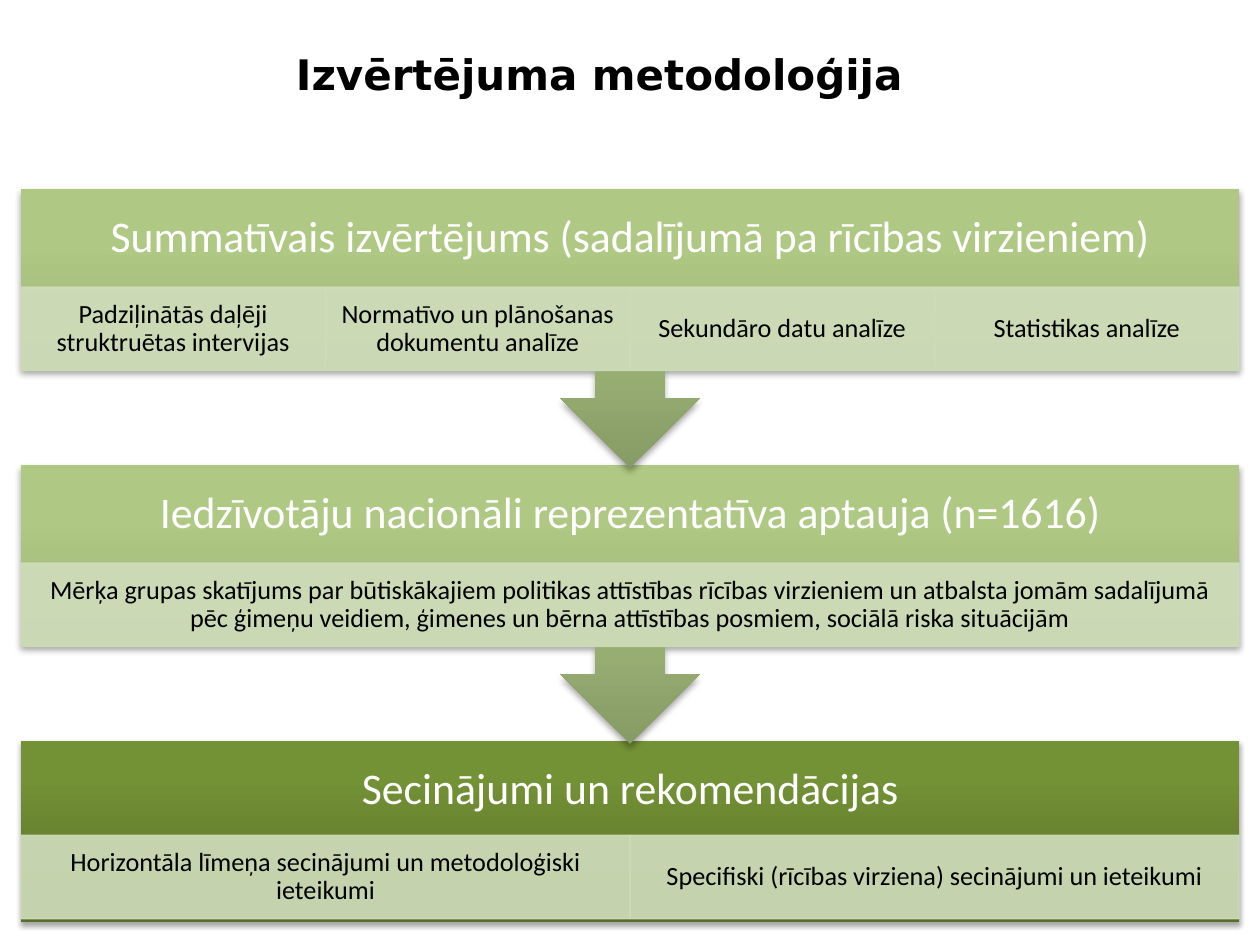
from dataclasses import dataclass

from lxml.etree import SubElement
from pptx import Presentation
from pptx.dml.color import RGBColor
from pptx.enum.shapes import MSO_SHAPE as Shape
from pptx.enum.text import MSO_ANCHOR as Anchor, PP_ALIGN as Align
from pptx.oxml import parse_xml
from pptx.oxml.ns import nsdecls, qn
from pptx.util import Pt


@dataclass(frozen=True)
class Theme:
    black: str = "000000"
    white: str = "FFFFFF"
    cell: str = "D0DDBC"
    light: tuple = ("879B66", "AFC984", "B0CB84")
    dark: tuple = ("586F29", "739135", "749334")
    title_font: str = "DejaVu Sans"
    font: str = "Calibri"
    title_size: float = 24
    header_size: float = 25
    cell_size: float = 15


THEME = Theme()
LEFT, TOP, WIDTH = 12, 108, 696
STEP = 157.7
CALLOUT_H, FINAL_H = 159.4, 103.7
HEADER_H, CELL_H = 56, 47.7

STAGES = [
    ("Summatīvais izvērtējums (sadalījumā pa rīcības virzieniem)",
     ["Padziļinātās daļēji struktruētas intervijas",
      "Normatīvo un plānošanas dokumentu analīze",
      "Sekundāro datu analīze",
      "Statistikas analīze"]),
    ("Iedzīvotāju nacionāli reprezentatīva aptauja (n=1616)",
     ["Mērķa grupas skatījums par būtiskākajiem politikas attīstības rīcības "
      "virzieniem un atbalsta jomām sadalījumā pēc ģimeņu veidiem, ģimenes un "
      "bērna attīstības posmiem, sociālā riska situācijām"]),
    ("Secinājumi un rekomendācijas",
     ["Horizontāla līmeņa secinājumi un metodoloģiski ieteikumi",
      "Specifiski (rīcības virziena) secinājumi un ieteikumi"]),
]


def write(s, text, size, color=THEME.black, font=THEME.font, bold=False,
          align=Align.CENTER, anchor=Anchor.MIDDLE, inset=(7.2, 3.6), spacing=0.9):
    tf = s.text_frame
    tf.word_wrap = True
    tf.vertical_anchor = anchor
    tf.margin_left = tf.margin_right = Pt(inset[0])
    tf.margin_top = tf.margin_bottom = Pt(inset[1])
    p = tf.paragraphs[0]
    p.alignment, p.line_spacing = align, spacing
    r = p.add_run()
    r.text = text
    r.font.name, r.font.size, r.font.bold = font, Pt(size), bold
    r.font.color.rgb = RGBColor.from_string(color)


def add_panel(slide, kind, box, colors, rotation=0):
    """Add a shape with an upward gradient and a soft shadow below it."""
    s = slide.shapes.add_shape(kind, *map(Pt, box))
    s.rotation = rotation
    s.line.fill.background()
    s.shadow.inherit = False
    stops = "".join(f'<a:gs pos="{pos}"><a:srgbClr val="{color}"/></a:gs>'
                    for pos, color in zip((0, 80000, 100000), colors))
    sp_pr = s._element.spPr
    sp_pr.find(qn("a:prstGeom")).addnext(parse_xml(
        f'<a:gradFill {nsdecls("a")} rotWithShape="0"><a:gsLst>{stops}</a:gsLst>'
        '<a:lin ang="16200000" scaled="0"/></a:gradFill>'))
    sp_pr.find(qn("a:effectLst")).append(parse_xml(
        f'<a:outerShdw {nsdecls("a")} blurRad="{Pt(3.1)}" dist="{Pt(1.8)}" '
        f'dir="5400000" rotWithShape="0"><a:srgbClr val="{THEME.black}">'
        '<a:alpha val="35000"/></a:srgbClr></a:outerShdw>'))


def add_cell(slide, box, text):
    s = slide.shapes.add_shape(Shape.RECTANGLE, *map(Pt, box))
    s.shadow.inherit = False
    s.fill.solid()
    s.line.width = Pt(0.75)
    for color in (s.fill.fore_color, s.line.color):
        color.rgb = RGBColor.from_string(THEME.cell)
    for clr in s._element.spPr.iter(qn("a:srgbClr")):
        SubElement(clr, qn("a:alpha"), val="90000")
    write(s, text, THEME.cell_size, inset=(8.4, 1.5))


def add_stage(slide, box, header, cells, final):
    """Add a panel with its header and an even row of cells; all but the final one point down."""
    x, y, w, _ = box
    if final:
        add_panel(slide, Shape.RECTANGLE, box, THEME.dark)
    else:
        add_panel(slide, Shape.UP_ARROW_CALLOUT, box, THEME.light, rotation=180)
    tb = slide.shapes.add_textbox(Pt(x), Pt(y), Pt(w), Pt(HEADER_H))
    write(tb, header, THEME.header_size, THEME.white, inset=(13.7, 13.7))
    cell_y = y + (0.52 * FINAL_H if final else HEADER_H)
    cell_w = w / len(cells)
    for i, text in enumerate(cells):
        add_cell(slide, (x + i * cell_w, cell_y, cell_w, CELL_H), text)


def add_title(slide, box, text):
    tb = slide.shapes.add_textbox(*map(Pt, box))
    write(tb, text, THEME.title_size, font=THEME.title_font, bold=True,
          align=Align.LEFT, anchor=Anchor.TOP, spacing=1)


def main():
    prs = Presentation()
    prs.slide_width, prs.slide_height = Pt(720), Pt(540)
    slide = prs.slides.add_slide(prs.slide_layouts[6])
    add_title(slide, (162, 24, 480, 81), "Izvērtējuma metodoloģija")
    last = len(STAGES) - 1
    # The lowest stage goes first so that each arrow tip lies over the next panel.
    for i, (header, cells) in reversed(list(enumerate(STAGES))):
        height = FINAL_H if i == last else CALLOUT_H
        add_stage(slide, (LEFT, TOP + i * STEP, WIDTH, height), header, cells, i == last)
    prs.save("out.pptx")


if __name__ == "__main__":
    main()
